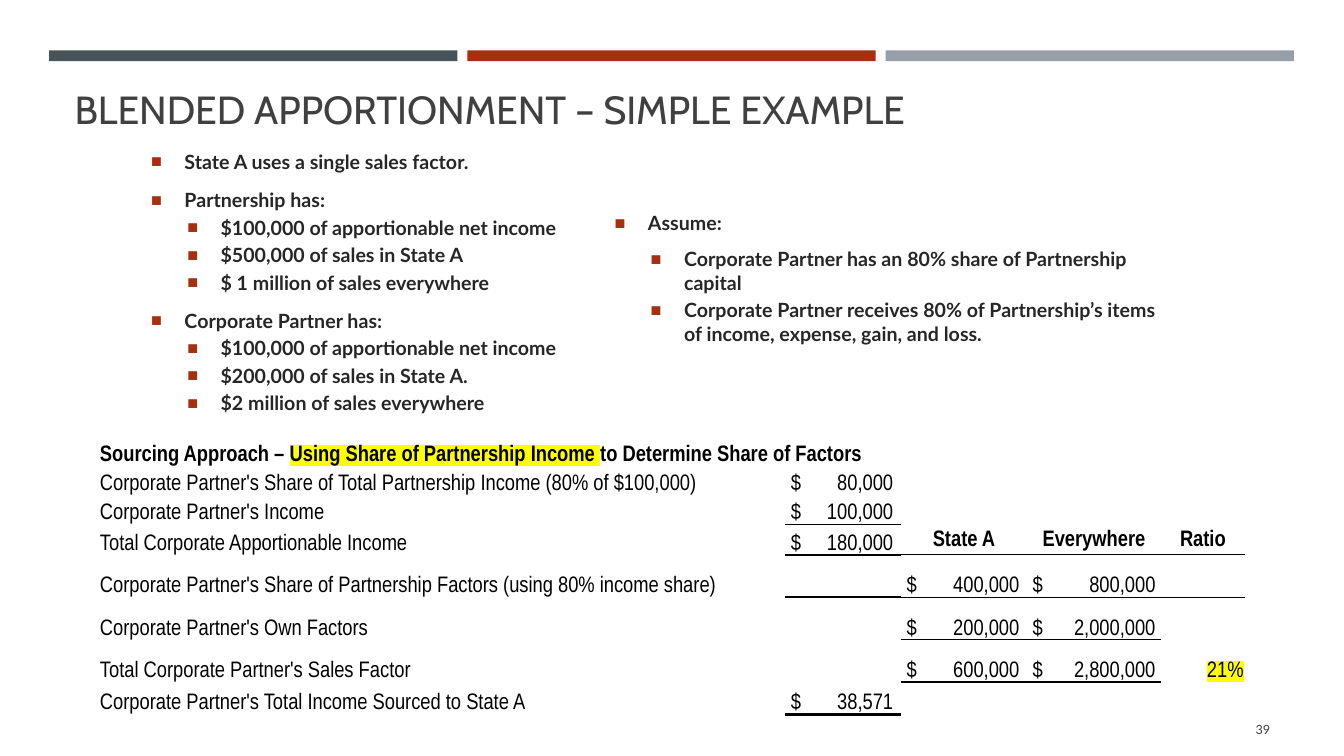
import pptx
import pptx.dml.color
import pptx.enum.text
import pptx.oxml
import pptx.oxml.ns
import pptx.util
from pptx.util import Cm, Pt

ALIGN = pptx.enum.text.PP_ALIGN
ANCHOR = pptx.enum.text.MSO_ANCHOR
NS = pptx.oxml.ns.nsdecls("a")
NO_STYLE = "{2D5ABB26-0587-4C30-8999-92F81FD0307C}"
YELLOW, RUST, BODY = "FFFF00", "A5300F", "262626"

FACTS = [
    (0, "State A uses a single sales factor."),
    (0, "Partnership has:"),
    (1, "$100,000 of apportionable net income"),
    (1, "$500,000 of sales in State A"),
    (1, "$ 1 million of sales everywhere"),
    (0, "Corporate Partner has:"),
    (1, "$100,000 of apportionable net income"),
    (1, "$200,000 of sales in State A."),
    (1, "$2 million of sales everywhere"),
]
ASSUMPTIONS = [
    (0, "Assume:"),
    (1, "Corporate Partner has an 80% share of Partnership capital"),
    (1, "Corporate Partner receives 80% of Partnership’s items of income, "
        "expense, gain, and loss."),
]

# Each row: height in cm, then label, income, State A, everywhere, ratio
COLUMNS = [17.3, 2.92, 3.17, 3.38, 2.11]
ROWS = [
    (0.74, "", "", "", "", ""),
    (0.74, "Corporate Partner's Share of Total Partnership Income (80% of $100,000)",
     "80,000", "", "", ""),
    (0.74, "Corporate Partner's Income", "100,000", "", "", ""),
    (0.76, "Total Corporate Apportionable Income", "180,000",
     "State A", "Everywhere", "Ratio"),
    (1.07, "Corporate Partner's Share of Partnership Factors (using 80% income share)",
     "", "400,000", "800,000", ""),
    (1.07, "Corporate Partner's Own Factors", "", "200,000", "2,000,000", ""),
    (1.07, "Total Corporate Partner's Sales Factor", "", "600,000", "2,800,000", "21%"),
    (0.81, "Corporate Partner's Total Income Sourced to State A", "38,571", "", "", ""),
]
HEADING = [("Sourcing Approach – ", None),
           ("Using Share of Partnership Income ", YELLOW),
           ("to Determine Share of Factors", None)]
# Right edge of the figures, in cm from the cell's text start
TABS = {1: 2.58, 2: 2.84, 3: 3.1}
# Rules under cells: row, column, width in points
RULES = [(2, 1, 0.5), (3, 1, 2), (3, 2, 0.5), (3, 3, 0.5), (3, 4, 0.5),
         (5, 2, 0.5), (5, 3, 0.5), (6, 2, 2), (6, 3, 2), (7, 1, 2)]


def rgb(value):
    return pptx.dml.color.RGBColor.from_string(value)


def element(xml):
    """Parse a drawing element, given without its namespace."""
    head, sep, rest = xml.partition(" ")
    return pptx.oxml.parse_xml(f"{head} {NS} {rest}")


def style(r, size, font, color, bold=False, highlight=None):
    r.font.size, r.font.name, r.font.bold = Pt(size), font, bold
    r.font.color.rgb = rgb(color)
    if highlight:
        fill = r.font.fill._xPr.find(pptx.oxml.ns.qn("a:solidFill"))
        fill.addnext(element(f'<a:highlight ><a:srgbClr val="{highlight}"/></a:highlight>'))


def add_bar(s, left, color):
    sp = s.shapes.add_shape(1, Cm(left), Cm(1.27), Cm(10.29), Cm(0.27))
    sp.shadow.inherit = False
    sp.fill.solid()
    sp.fill.fore_color.rgb = rgb(color)
    sp.line.fill.background()


def add_box(s, left, top, width, height, anchor):
    tf = s.shapes.add_textbox(Cm(left), Cm(top), Cm(width), Cm(height)).text_frame
    tf.word_wrap = True
    tf.vertical_anchor = anchor
    return tf


def add_line(s, box, text, size, font, anchor, align=ALIGN.LEFT):
    p = add_box(s, *box, anchor).paragraphs[0]
    p.text, p.alignment = text, align
    style(p.runs[0], size, font, "404040")


def add_bullets(s, box, items):
    tf = add_box(s, *box, ANCHOR.MIDDLE)
    for i, (level, text) in enumerate(items):
        p = tf.paragraphs[0] if i == 0 else tf.add_paragraph()
        p.text, p.level = text, level
        p.space_before = Pt(2.8)
        if level == 0:
            p.line_spacing = 1.1
        # Space follows a group's last line and a lone or introducing first line
        following = items[i + 1][0] if i + 1 < len(items) else None
        closes_group = following == 0
        p.space_after = Pt(6 if closes_group or len(items) == 3 and i == 0 else 0)
        pPr = p._p.get_or_add_pPr()
        pPr.set("marL", str(Cm(0.84 + 0.91 * level)))
        pPr.set("indent", str(-Cm(0.84)))
        pPr.append(element(f'<a:buClr ><a:srgbClr val="{RUST}"/></a:buClr>'))
        pPr.append(element('<a:buSzPct val="92000"/>'))
        pPr.append(element('<a:buFont typeface="Arial"/>'))
        pPr.append(element('<a:buChar char="■"/>'))
        style(p.runs[0], 14, "Lato", BODY, bold=True)


def fill_cell(cell, text, row, col):
    cell.fill.background()
    cell.margin_left = cell.margin_right = cell.margin_top = Cm(0.03)
    cell.margin_bottom = 0
    cell.vertical_anchor = ANCHOR.BOTTOM
    p = cell.text_frame.paragraphs[0]
    if not text:
        p._p.append(element('<a:endParaRPr sz="1600"/>'))
        return
    header = row == 3 and col > 1
    p.text = text
    if header:
        p.alignment = ALIGN.CENTER
        cell.vertical_anchor = ANCHOR.MIDDLE
    elif col == 4:
        p.alignment = ALIGN.RIGHT
    elif col > 0:
        p.text = f"$\t{text}"
        cell.margin_left = Cm(0.14)
        p._p.get_or_add_pPr().append(element(
            f'<a:tabLst ><a:tab pos="{Cm(TABS[col])}" algn="r"/></a:tabLst>'))
    for r in p.runs:
        style(r, 16, "Arial Narrow", "000000", header,
              YELLOW if col == 4 and not header else None)


def add_rule(table, row, col, width):
    """Draw a rule under a cell, shared with the cell below it."""
    for tag, r in (("lnB", row), ("lnT", row + 1)):
        if r < len(table.rows):
            tcPr = table.cell(r, col)._tc.get_or_add_tcPr()
            tcPr.insert(len(tcPr) - 1, element(
                f'<a:{tag} w="{Pt(width)}"><a:solidFill><a:srgbClr val="000000"/>'
                f'</a:solidFill></a:{tag}>'))


def add_sourcing_table(s):
    heights = [row[0] for row in ROWS]
    frame = s.shapes.add_table(len(ROWS), len(COLUMNS), Cm(2.49), Cm(11),
                               Cm(sum(COLUMNS)), Cm(sum(heights)))
    table = frame.table
    table.first_row = table.horz_banding = False
    table._tbl.tblPr.find(pptx.oxml.ns.qn("a:tableStyleId")).text = NO_STYLE
    for column, width in zip(table.columns, COLUMNS):
        column.width = Cm(width)
    for i, (height, *texts) in enumerate(ROWS):
        table.rows[i].height = Cm(height)
        for j, text in enumerate(texts):
            fill_cell(table.cell(i, j), text, i, j)
    # Heading across all columns
    table.cell(0, 0).merge(table.cell(0, len(COLUMNS) - 1))
    p = table.cell(0, 0).text_frame.paragraphs[0]
    for text, highlight in HEADING:
        r = p.add_run()
        r.text = text
        style(r, 16, "Arial Narrow", "000000", True, highlight)
    for rule in RULES:
        add_rule(table, *rule)


def main():
    prs = pptx.Presentation()
    prs.slide_width, prs.slide_height = Cm(33.87), Cm(19.05)
    s = prs.slides.add_slide(prs.slide_layouts[6])
    # Bars along the top
    for i, color in enumerate(("465359", RUST, "969FA7")):
        add_bar(s, 1.24 + 10.54 * i, color)
    # Title and page number
    add_line(s, (1.63, 1.96, 30.63, 1.5), "BLENDED APPORTIONMENT – SIMPLE EXAMPLE",
             28, "Cabin", ANCHOR.BOTTOM)
    add_line(s, (29.34, 17.86, 2.92, 1.02), "39", 9, "Lato", ANCHOR.MIDDLE, ALIGN.RIGHT)
    # Facts, assumptions and the calculation
    add_bullets(s, (3.56, 3.35, 11.15, 7.47), FACTS)
    add_bullets(s, (15.24, 3.96, 14.3, 6.05), ASSUMPTIONS)
    add_sourcing_table(s)
    prs.save("out.pptx")


if __name__ == "__main__":
    main()
